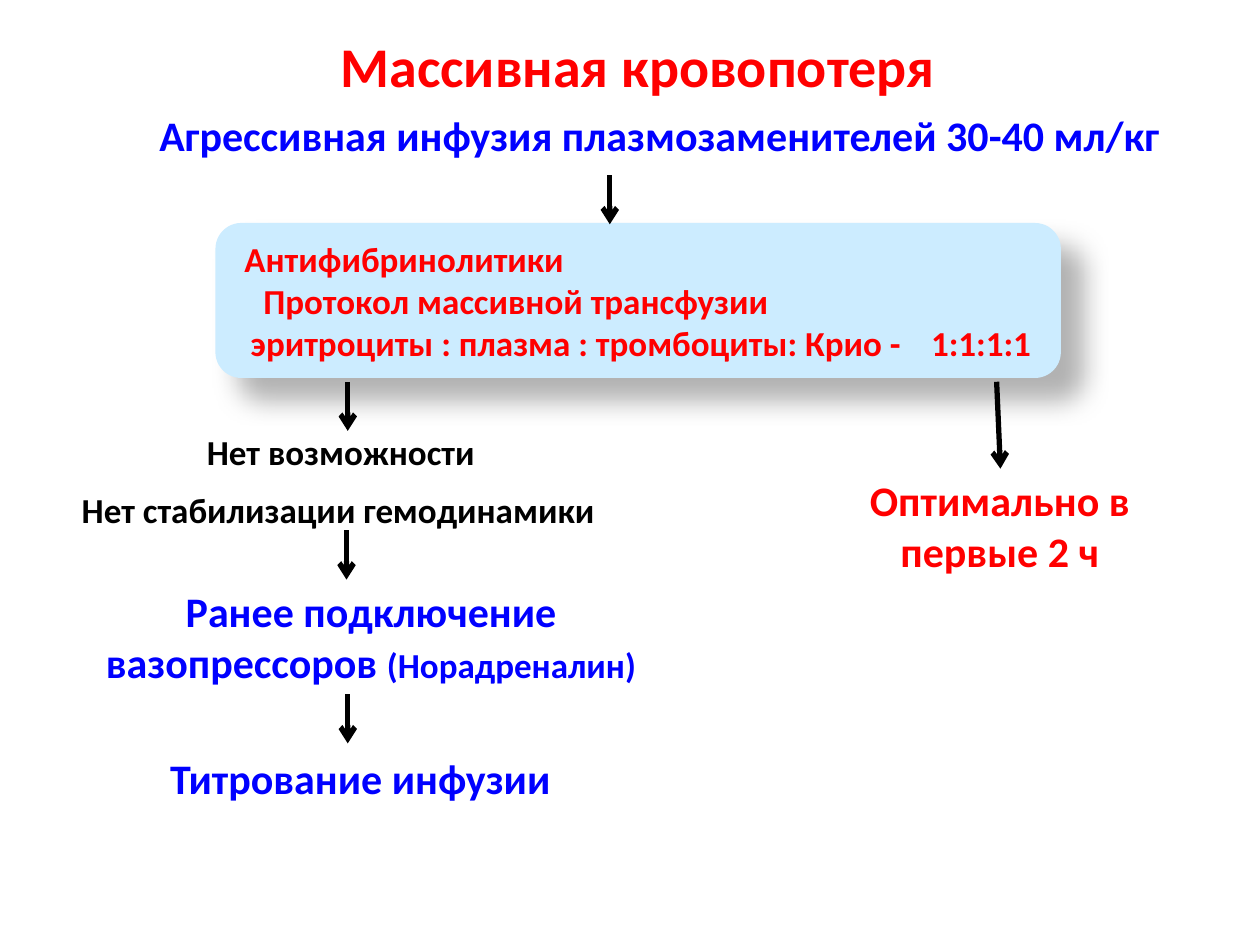
"""Build the massive blood loss treatment flow slide."""
from dataclasses import dataclass

import lxml.etree
import pptx
import pptx.dml.color
import pptx.enum.shapes
import pptx.enum.text
import pptx.oxml
import pptx.oxml.ns
import pptx.util

ALIGN = pptx.enum.text.PP_ALIGN
ANCHOR = pptx.enum.text.MSO_ANCHOR


@dataclass(frozen=True)
class Theme:
    font: str = "Calibri"
    red: str = "FF0000"
    blue: str = "0000FF"
    black: str = "000000"
    panel: str = "CCECFF"
    title: int = 32
    step: int = 24
    note: int = 20
    arrow: int = 3


class Flow:
    COLS, ROWS = 100, 75

    def __init__(self, prs, theme):
        self.prs, self.theme = prs, theme
        self.s = prs.slides.add_slide(prs.slide_layouts[5])

    def grid(self, *cells):
        units = (self.prs.slide_width / self.COLS, self.prs.slide_height / self.ROWS)
        return [round(c * units[i % 2]) for i, c in enumerate(cells)]

    def rgb(self, color):
        return pptx.dml.color.RGBColor.from_string(color)

    def style(self, r, size, color):
        r.font.name, r.font.size, r.font.bold = self.theme.font, pptx.util.Pt(size), True
        r.font.color.rgb = self.rgb(color)

    def set_text(self, tf, text, size, color, align=ALIGN.CENTER):
        tf.word_wrap = True
        tf.text = text
        for p in tf.paragraphs:
            p.alignment = align
            for r in p.runs:
                self.style(r, size, color)

    def title(self, cells, text):
        sp = self.s.shapes.title
        sp.left, sp.top, sp.width, sp.height = self.grid(*cells)
        self.set_text(sp.text_frame, text, self.theme.title, self.theme.red)

    def label(self, cells, text, size, color, aside=""):
        sp = self.s.shapes.add_textbox(*self.grid(*cells))
        self.set_text(sp.text_frame, text, size, color)
        if aside:
            r = sp.text_frame.paragraphs[0].add_run()
            r.text = aside
            self.style(r, self.theme.note, color)

    def panel(self, cells, lines, indents, tab):
        sp = self.s.shapes.add_shape(
            pptx.enum.shapes.MSO_SHAPE.ROUNDED_RECTANGLE, *self.grid(*cells))
        sp.fill.solid()
        sp.fill.fore_color.rgb = self.rgb(self.theme.panel)
        sp.line.fill.background()
        self.shadow(sp)
        tf = sp.text_frame
        tf.vertical_anchor = ANCHOR.MIDDLE
        tf.margin_left, tf.margin_right = pptx.util.Inches(0.17), 0
        self.set_text(tf, "\n".join(lines), self.theme.note, self.theme.red, ALIGN.LEFT)
        for p, indent in zip(tf.paragraphs, indents):
            pPr = p._p.get_or_add_pPr()
            pPr.set("marL", str(self.grid(indent)[0]))
            tabs = lxml.etree.SubElement(pPr, pptx.oxml.ns.qn("a:tabLst"))
            lxml.etree.SubElement(tabs, pptx.oxml.ns.qn("a:tab"),
                                  pos=str(self.grid(tab)[0]), algn="l")

    def shadow(self, sp):
        sp._element.spPr.append(pptx.oxml.parse_xml(
            f'<a:effectLst {pptx.oxml.ns.nsdecls("a")}>'
            f'<a:outerShdw blurRad="{pptx.util.Pt(15)}" dist="{pptx.util.Pt(18)}" '
            f'dir="2700000" algn="tl" rotWithShape="0"><a:srgbClr val="{self.theme.black}">'
            '<a:alpha val="30000"/></a:srgbClr></a:outerShdw></a:effectLst>'))

    def arrow(self, *cells):
        c = self.s.shapes.add_connector(
            pptx.enum.shapes.MSO_CONNECTOR.STRAIGHT, *self.grid(*cells))
        c.line.color.rgb = self.rgb(self.theme.black)
        c.line.width = pptx.util.Pt(self.theme.arrow)
        spPr = c._element.spPr
        lxml.etree.SubElement(spPr.get_or_add_ln(),
                              pptx.oxml.ns.qn("a:tailEnd"), type="arrow")
        lxml.etree.SubElement(spPr, pptx.oxml.ns.qn("a:effectLst"))


def main():
    prs = pptx.Presentation()
    prs.slide_width, prs.slide_height = pptx.util.Inches(10), pptx.util.Inches(7.5)
    t = Theme()
    flow = Flow(prs, t)

    flow.title((21.5, 2, 58.3, 6.4), "Массивная кровопотеря")
    flow.panel((17.1, 17.7, 67.1, 12.3),
               ("Антифибринолитики",
                "Протокол массивной трансфузии",
                "эритроциты : плазма : тромбоциты: Крио -\t1:1:1:1"),
               indents=(0, 1.5, 0.5), tab=54)

    for cells, text, size, color, aside in (
        ((6.7, 8.2, 91.3, 5), "Агрессивная инфузия плазмозаменителей 30-40 мл/кг",
         t.step, t.blue, ""),
        ((64, 37.2, 30.7, 9.1), "Оптимально в первые 2 ч", t.step, t.red, ""),
        ((11.9, 33.7, 30.3, 4.4), "Нет возможности", t.note, t.black, ""),
        ((1.3, 38.3, 51.1, 4.4), "Нет стабилизации гемодинамики", t.note, t.black, ""),
        ((2.7, 46, 53.5, 9.1), "Ранее подключение вазопрессоров ",
         t.step, t.blue, "(Норадреналин)"),
        ((8.9, 59.2, 39.4, 5), "Титрование инфузии", t.step, t.blue, ""),
    ):
        flow.label(cells, text, size, color, aside)

    for x, y in ((48.4, 13.9), (27.6, 30.3), (27.5, 42.1), (27.6, 55.1)):
        flow.arrow(x, y, x, y + 3.9)
    flow.arrow(79.1, 30.3, 79.4, 37.2)

    prs.save("out.pptx")


if __name__ == "__main__":
    main()
